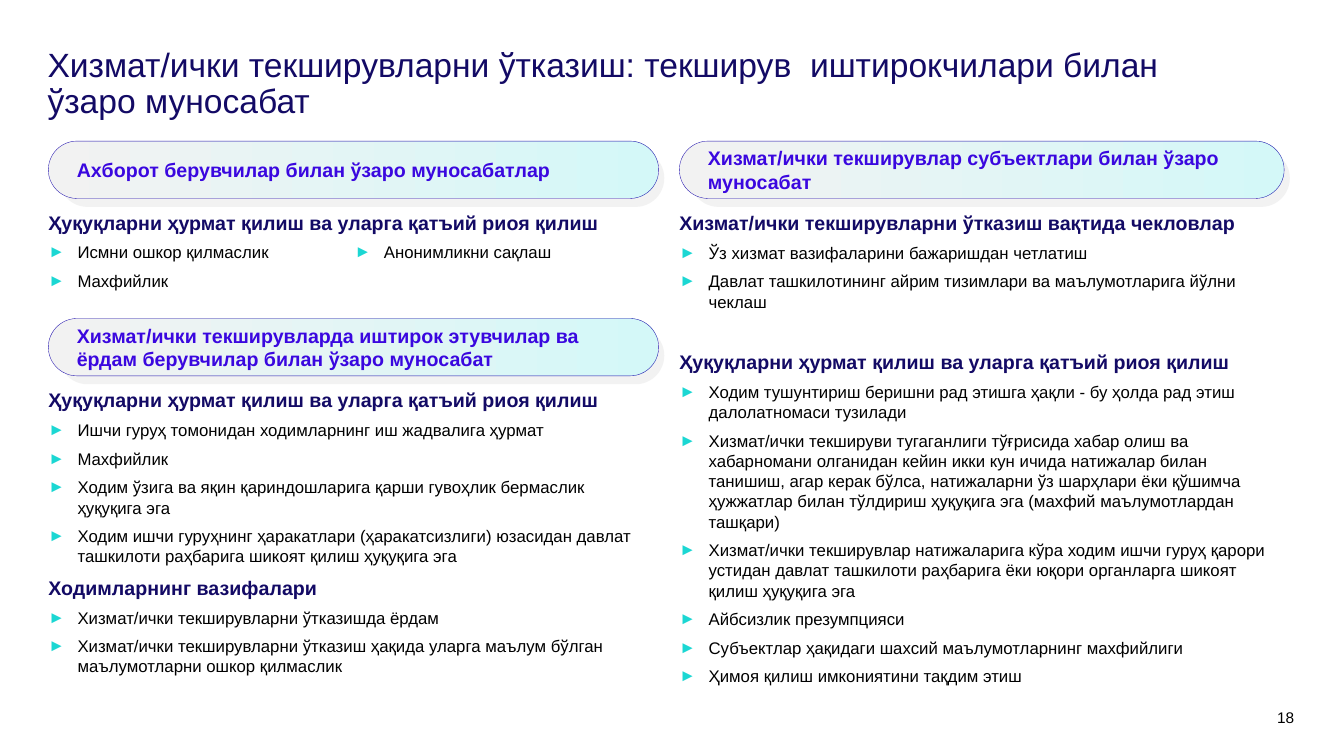
from dataclasses import dataclass

from lxml.etree import SubElement
from pptx import Presentation
from pptx.dml.color import RGBColor
from pptx.enum.shapes import MSO_SHAPE
from pptx.enum.text import MSO_ANCHOR, MSO_AUTO_SIZE, PP_ALIGN
from pptx.oxml.ns import qn
from pptx.util import Pt


@dataclass(frozen=True)
class Theme:
    font: str = "Arial"
    title_size: float = 24
    heading_size: float = 14
    body_size: float = 12
    number_size: float = 11
    navy: str = "130A65"
    violet: str = "3A07DF"
    outline: str = "2112AE"
    black: str = "000000"
    bullet: str = "1BD7D3"
    grey: str = "F2F2F2"
    aqua: str = "D4F8F8"


THEME = Theme()
BULLET_INDENT = 20.9
LEFT, RIGHT = 34.5, 485.3
BANNER_HEIGHT = 41
RIGHTS = "Ҳуқуқларни ҳурмат қилиш ва уларга қатъий риоя қилиш"

BANNERS = [
    ((LEFT, 100.8, 436, BANNER_HEIGHT), "Ахборот берувчилар билан ўзаро муносабатлар"),
    ((LEFT, 227.5, 436, BANNER_HEIGHT),
     "Хизмат/ички текширувларда иштирок этувчилар ва ёрдам берувчилар билан ўзаро муносабат"),
    ((RIGHT, 100.8, 432, BANNER_HEIGHT),
     "Хизмат/ички текширувлар субъектлари билан ўзаро муносабат"),
]

SECTIONS = [
    ((LEFT, 146.9, 403, 24.5), RIGHTS, [], 1),
    ((LEFT, 169.2, 439, 42.5), None,
     ["Исмни ошкор қилмаслик", "Махфийлик", "Анонимликни сақлаш"], 2),
    ((LEFT, 273.6, 439, 135.4), RIGHTS, [
        "Ишчи гуруҳ томонидан ходимларнинг иш жадвалига ҳурмат",
        "Махфийлик",
        "Ходим ўзига ва яқин қариндошларига қарши гувоҳлик бермаслик ҳуқуқига эга",
        "Ходим ишчи гуруҳнинг ҳаракатлари (ҳаракатсизлиги) юзасидан давлат "
        "ташкилоти раҳбарига шикоят қилиш ҳуқуқига эга",
    ], 1),
    ((LEFT, 407.5, 440, 80), "Ходимларнинг вазифалари", [
        "Хизмат/ички текширувларни ўтказишда ёрдам",
        "Хизмат/ички текширувларни ўтказиш ҳақида уларга маълум бўлган "
        "маълумотларни ошкор қилмаслик",
    ], 1),
    ((RIGHT, 146.9, 440, 80), "Хизмат/ички текширувларни ўтказиш вақтида чекловлар", [
        "Ўз хизмат вазифаларини бажаришдан четлатиш",
        "Давлат ташкилотининг айрим тизимлари ва маълумотларига йўлни чеклаш",
    ], 1),
    ((RIGHT, 246.5, 439, 249.8), RIGHTS, [
        "Ходим тушунтириш беришни рад этишга ҳақли - бу ҳолда рад этиш "
        "далолатномаси тузилади",
        "Хизмат/ички текшируви тугаганлиги тўғрисида хабар олиш ва хабарномани "
        "олганидан кейин икки кун ичида натижалар билан танишиш, агар керак бўлса, "
        "натижаларни ўз шарҳлари ёки қўшимча ҳужжатлар билан тўлдириш ҳуқуқига эга "
        "(махфий маълумотлардан ташқари)",
        "Хизмат/ички текширувлар натижаларига кўра ходим ишчи гуруҳ қарори устидан "
        "давлат ташкилоти раҳбарига ёки юқори органларга шикоят қилиш ҳуқуқига эга",
        "Айбсизлик презумпцияси",
        "Субъектлар ҳақидаги шахсий маълумотларнинг махфийлиги",
        "Ҳимоя қилиш имкониятини тақдим этиш",
    ], 1),
]


def color(value):
    return RGBColor.from_string(value)


def points(box):
    return [Pt(length) for length in box]


def set_insets(frame, left, top, right, bottom):
    frame.word_wrap = True
    frame.margin_left, frame.margin_top = Pt(left), Pt(top)
    frame.margin_right, frame.margin_bottom = Pt(right), Pt(bottom)


def style_paragraph(paragraph, text, size, text_color, bold=False):
    paragraph.text = text
    paragraph.font.name = THEME.font
    paragraph.font.size = Pt(size)
    paragraph.font.bold = bold
    paragraph.font.color.rgb = color(text_color)


def add_bullet(paragraph):
    properties = paragraph._p.get_or_add_pPr()
    properties.set("marL", str(Pt(BULLET_INDENT)))
    properties.set("indent", str(-Pt(BULLET_INDENT)))
    bullet_color = SubElement(properties, qn("a:buClr"))
    SubElement(bullet_color, qn("a:srgbClr"), val=THEME.bullet)
    SubElement(properties, qn("a:buFont"), typeface=THEME.font)
    SubElement(properties, qn("a:buChar"), char="►")


def add_label(slide, box, text, size, text_color, alignment=PP_ALIGN.LEFT, line_spacing=1.0):
    frame = slide.shapes.add_textbox(*points(box)).text_frame
    set_insets(frame, 0, 0, 0, 0)
    paragraph = frame.paragraphs[0]
    paragraph.alignment = alignment
    paragraph.line_spacing = line_spacing
    style_paragraph(paragraph, text, size, text_color)


def add_pill(group, box):
    pill = group.shapes.add_shape(MSO_SHAPE.ROUNDED_RECTANGLE, *points(box))
    pill.adjustments[0] = 0.5
    pill.shadow.inherit = False
    return pill


def add_banner(slide, box, text):
    left, top, width, height = box
    group = slide.shapes.add_group_shape()

    backdrop = add_pill(group, (left + 7.5, top + 6, width - 3.5, height))
    backdrop.fill.solid()
    backdrop.fill.fore_color.rgb = color(THEME.grey)
    backdrop.line.fill.background()

    front = add_pill(group, box)
    front.fill.gradient()
    front.fill.gradient_angle = 0
    for stop, stop_color in zip(front.fill.gradient_stops, (THEME.grey, THEME.aqua)):
        stop.color.rgb = color(stop_color)
    front.line.color.rgb = color(THEME.outline)
    front.line.width = Pt(0.25)

    frame = front.text_frame
    set_insets(frame, 14.4, 3.6, 7.2, 3.6)
    frame.vertical_anchor = MSO_ANCHOR.MIDDLE
    paragraph = frame.paragraphs[0]
    paragraph.alignment = PP_ALIGN.LEFT
    style_paragraph(paragraph, text, THEME.heading_size, THEME.violet, bold=True)


def add_section(slide, box, heading, items, columns):
    frame = slide.shapes.add_textbox(*points(box)).text_frame
    set_insets(frame, 0, 3.6, 7.2, 3.6)
    if columns > 1:
        body = frame._txBody.bodyPr
        body.set("numCol", str(columns))
        body.set("spcCol", str(Pt(5.8)))
    else:
        frame.auto_size = MSO_AUTO_SIZE.SHAPE_TO_FIT_TEXT

    entries = [(heading, True)] if heading else []
    entries += [(item, False) for item in items]
    for index, (text, is_heading) in enumerate(entries):
        paragraph = frame.add_paragraph() if index else frame.paragraphs[0]
        paragraph.space_after = Pt(6)
        if is_heading:
            style_paragraph(paragraph, text, THEME.heading_size, THEME.navy, bold=True)
        else:
            add_bullet(paragraph)
            style_paragraph(paragraph, text, THEME.body_size, THEME.black)


def main():
    presentation = Presentation()
    presentation.slide_width, presentation.slide_height = Pt(960), Pt(540)
    slide = presentation.slides.add_slide(presentation.slide_layouts[6])

    add_label(slide, (34, 34.5, 859, 34.5),
              "Хизмат/ички текширувларни ўтказиш: текширув  иштирокчилари билан ўзаро муносабат",
              THEME.title_size, THEME.navy, line_spacing=0.9)
    for box, text in BANNERS:
        add_banner(slide, box, text)
    for box, heading, items, columns in SECTIONS:
        add_section(slide, box, heading, items, columns)
    add_label(slide, (893.5, 505.5, 31, 11.5), "18",
              THEME.number_size, THEME.black, PP_ALIGN.RIGHT)

    presentation.save("out.pptx")


if __name__ == "__main__":
    main()
